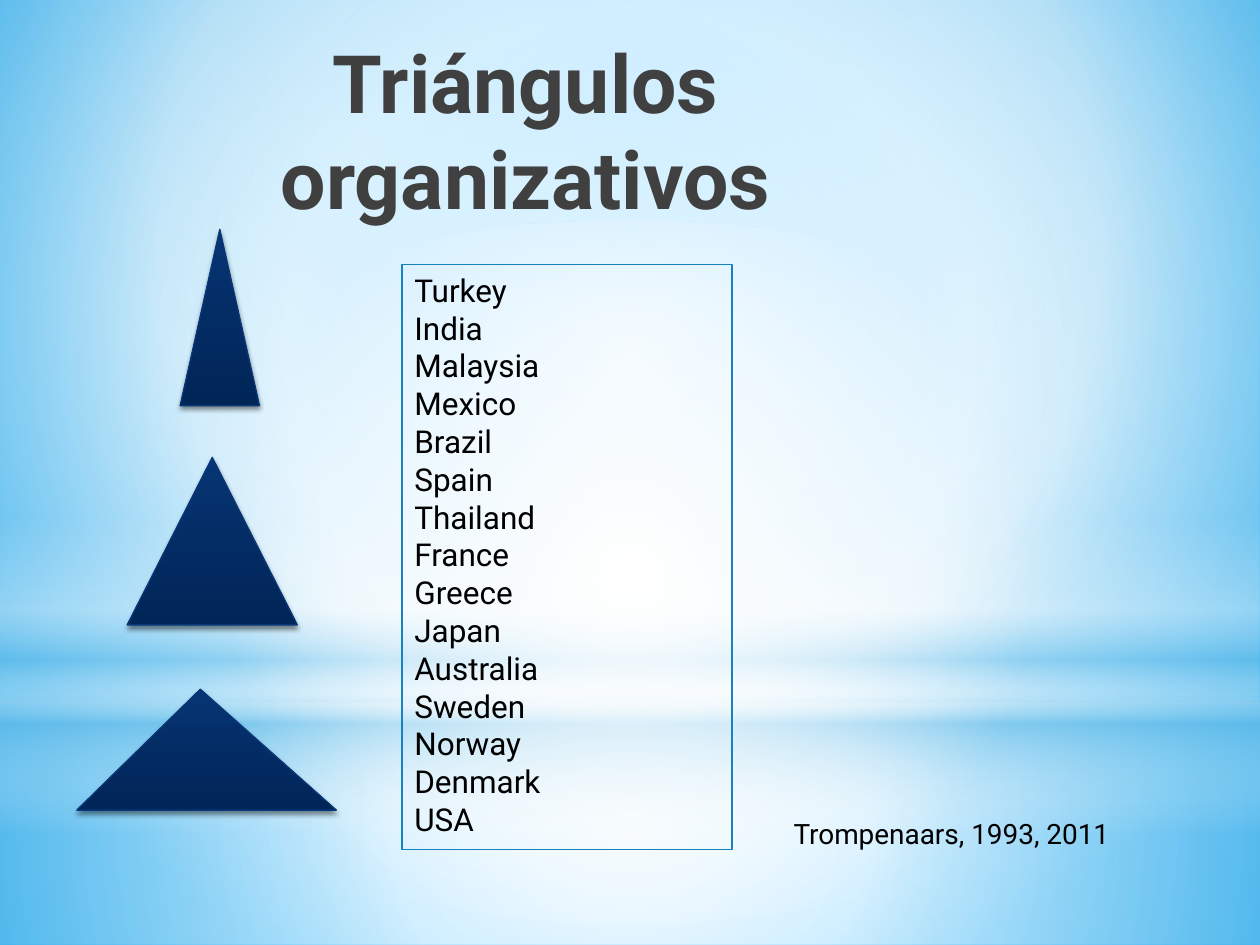
from lxml.etree import SubElement as Sub
from pptx import Presentation
from pptx.dml.color import RGBColor as RGB
from pptx.enum.shapes import MSO_SHAPE as Kind
from pptx.enum.text import MSO_ANCHOR as Anchor, MSO_AUTO_SIZE as Auto, PP_ALIGN as Align
from pptx.oxml.ns import qn
from pptx.util import Inches, Pt

WIDE, HIGH = 10, 7.5
FONT = "Roboto"
BLACK, WHITE = RGB(0, 0, 0), RGB(255, 255, 255)
GREY = RGB(0x40, 0x40, 0x40)
SKY = RGB(0x62, 0xBC, 0xE9)
EDGE = RGB(0x17, 0x82, 0xBF)
BRIGHT, PALE, DEEP = RGB(0x44, 0xBF, 0xFF), RGB(0xC6, 0xEA, 0xFE), RGB(0x12, 0xAE, 0xFF)
NAVY, DARK, RIM = RGB(0x07, 0x34, 0x73), RGB(0, 0x25, 0x57), RGB(0x07, 0x37, 0x79)

LANDS = ["Turkey", "India", "Malaysia", "Mexico", "Brazil", "Spain", "Thailand",
         "France", "Greece", "Japan", "Australia", "Sweden", "Norway", "Denmark", "USA"]

# Boxes are left, top, width, height in inches
CENTRE = (50, 50, 50, 50)
SPLIT = 5.58
GLOWS = [
    (Kind.RECTANGLE, (0, SPLIT, WIDE, HIGH - SPLIT),
     [(0, WHITE, 91), (37, WHITE, 76), (100, SKY, 79)], CENTRE),
    (Kind.RECTANGLE, (0, 0, WIDE, SPLIT),
     [(0, WHITE, 89), (48, WHITE, 62), (100, SKY, 79)], CENTRE),
    (Kind.RECTANGLE, (0, 4.12, WIDE, 2.5),
     [(0, WHITE, 0), (29, WHITE, 30), (45, SKY, 40),
      (55, WHITE, 26), (65, SKY, 60), (100, WHITE, 0)], None),
    (Kind.OVAL, (0, 1.75, WIDE, SPLIT), [(0, WHITE, 100), (56, WHITE, 0)], CENTRE),
]
PEAKS = [((1.43, 1.82, 0.63, 1.4), 0.5),
         ((1.01, 3.63, 1.35, 1.33), 0.5),
         ((0.61, 5.47, 2.06, 0.96), 0.476)]


def apply(item, form):
    for name, value in form.items():
        setattr(item, name, value)


def tint(node, color, alpha):
    clr = Sub(node, qn("a:srgbClr"), val=str(color))
    if alpha < 100:
        Sub(clr, qn("a:alpha"), val=str(alpha * 1000))


def blend(fill, root, stops, focus=None):
    """Gradient fill: circular around focus, or straight down without one."""
    fill.gradient()
    grad = next(root.iter(qn("a:gradFill")))
    for child in list(grad):
        grad.remove(child)
    row = Sub(grad, qn("a:gsLst"))
    for pos, color, alpha in stops:
        tint(Sub(row, qn("a:gs"), pos=str(pos * 1000)), color, alpha)
    if focus:
        ring = Sub(grad, qn("a:path"), attrib={"path": "circle"})
        sides = {side: str(share * 1000) for side, share in zip("ltrb", focus)}
        Sub(ring, qn("a:fillToRect"), attrib=sides)
    else:
        Sub(grad, qn("a:lin"), ang="5400000", scaled="0")


def shape(slide, kind, box):
    item = slide.shapes.add_shape(kind, *map(Inches, box))
    item.shadow.inherit = False
    item.line.fill.background()
    return item


def outline(item, color):
    item.line.color.rgb = color
    item.line.width = Pt(0.75)


def glow(slide, kind, box, stops, focus):
    item = shape(slide, kind, box)
    blend(item.fill, item.element, stops, focus)


def peak(slide, box, tip):
    item = shape(slide, Kind.ISOSCELES_TRIANGLE, box)
    item.adjustments[0] = tip
    blend(item.fill, item.element, [(0, NAVY, 100), (100, DARK, 100)])
    outline(item, RIM)
    effects = next(item.element.iter(qn("a:effectLst")))
    cast = Sub(effects, qn("a:outerShdw"), blurRad=str(Pt(3.1)), dist=str(Pt(1.8)),
               dir="5400000", rotWithShape="0")
    tint(cast, BLACK, 45)


def write(item, lines, size, color=BLACK, bold=False, align=Align.LEFT, grow=True):
    frame = item.text_frame
    apply(frame, {"word_wrap": True, "vertical_anchor": Anchor.TOP,
                  "auto_size": Auto.SHAPE_TO_FIT_TEXT if grow else Auto.NONE})
    frame.text = "\n".join(lines)
    for para in frame.paragraphs:
        para.alignment = align
        for run in para.runs:
            apply(run.font, {"name": FONT, "size": Pt(size), "bold": bold})
            run.font.color.rgb = color


def label(slide, box, text, size, **form):
    write(slide.shapes.add_textbox(*map(Inches, box)), [text], size, **form)


def main():
    deck = Presentation()
    apply(deck, {"slide_width": Inches(WIDE), "slide_height": Inches(HIGH)})
    slide = deck.slides.add_slide(deck.slide_layouts[6])

    # Backdrop
    blend(slide.background.fill, slide.element,
          [(0, BRIGHT, 100), (60, PALE, 100), (100, DEEP, 100)], (20, 10, 20, 60))
    for part in GLOWS:
        glow(slide, *part)

    # Title
    label(slide, (0.61, 0.21, 7.12, 1.25), "Triángulos organizativos", 46,
          color=GREY, bold=True, align=Align.CENTER, grow=False)

    # Triangles, from steep to flat
    for box, tip in PEAKS:
        peak(slide, box, tip)

    # Countries and source
    panel = shape(slide, Kind.RECTANGLE, (3.19, 2.1, 2.62, 4.64))
    panel.fill.background()
    outline(panel, EDGE)
    write(panel, LANDS, 18)
    label(slide, (6.2, 6.43, 3.53, 0.37), "Trompenaars, 1993, 2011", 16)

    deck.save("out.pptx")


if __name__ == "__main__":
    main()
